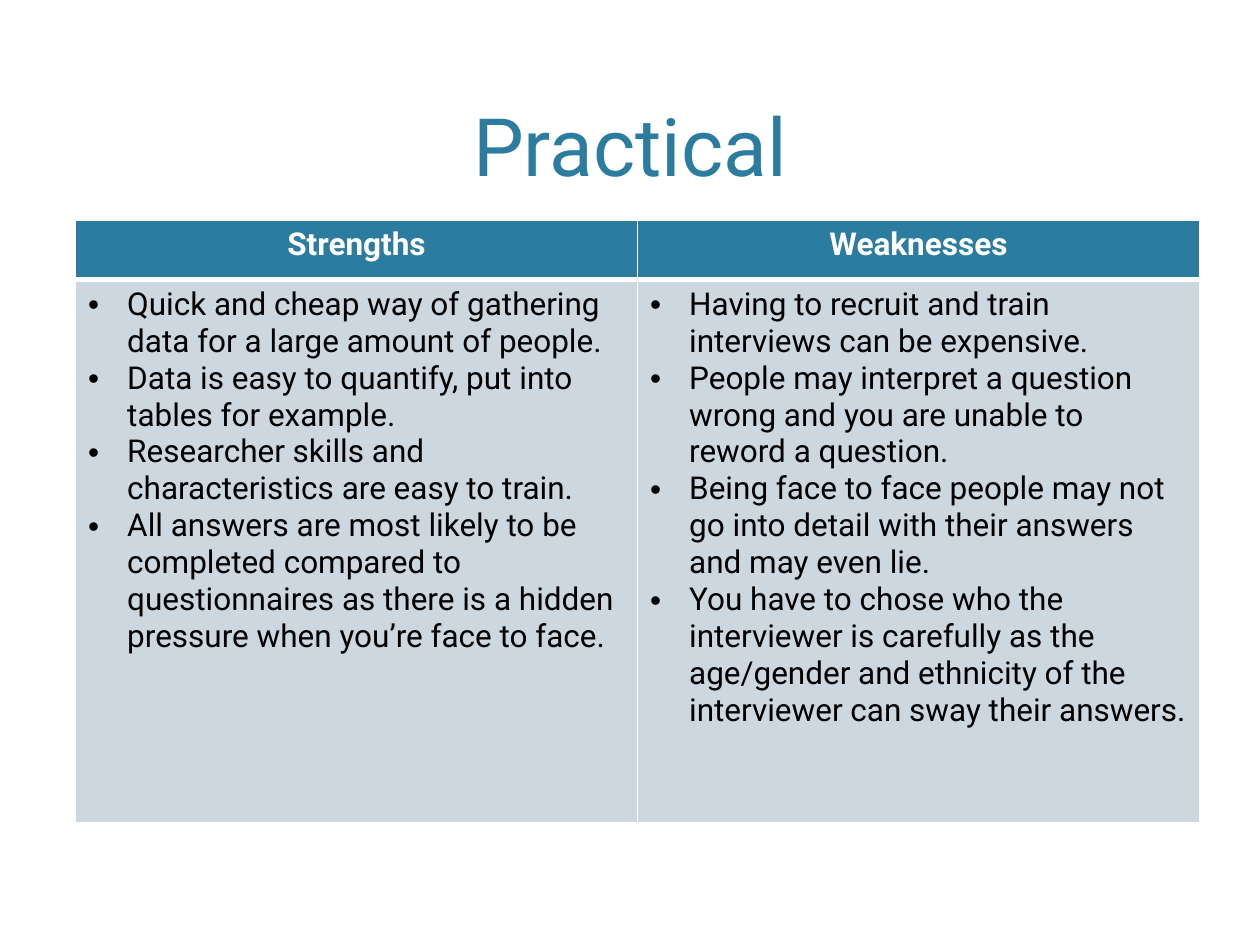
"""Build the slide comparing practical strengths and weaknesses."""
from dataclasses import dataclass

import lxml.etree
import pptx
import pptx.dml.color
import pptx.enum.text
import pptx.oxml.ns
import pptx.util

TEAL = pptx.dml.color.RGBColor(0x2C, 0x7C, 0x9F)
MIST = pptx.dml.color.RGBColor(0xCD, 0xD7, 0xDF)
WHITE = pptx.dml.color.RGBColor(0xFF, 0xFF, 0xFF)
BLACK = pptx.dml.color.RGBColor(0x00, 0x00, 0x00)
CENTER = pptx.enum.text.PP_ALIGN.CENTER

WIDTH, HEIGHT = pptx.util.Inches(10), pptx.util.Inches(7.5)
LEFT = int(WIDTH * 0.06)
COLUMN_WIDTH = pptx.util.Inches(4.46)
ROW_HEIGHTS = [pptx.util.Inches(0.47), pptx.util.Inches(4.31)]
INDENT = pptx.util.Inches(0.31)
THIN, THICK = pptx.util.Pt(1), pptx.util.Pt(3)

TITLE_FORMAT = {"name": "Roboto", "size": pptx.util.Pt(46), "bold": False}
HEAD_FORMAT = {"name": "Roboto", "size": pptx.util.Pt(18), "bold": True}
BODY_FORMAT = {**HEAD_FORMAT, "bold": False}


@dataclass
class Column:
    """One side of the comparison."""

    heading: str
    points: list[str]


COLUMNS = [
    Column("Strengths", [
        "Quick and cheap way of gathering data for a large amount of people.",
        "Data is easy to quantify, put into tables for example.",
        "Researcher skills and characteristics are easy to train.",
        "All answers are most likely to be completed compared to questionnaires "
        "as there is a hidden pressure when you’re face to face.",
    ]),
    Column("Weaknesses", [
        "Having to recruit and train interviews can be expensive.",
        "People may interpret a question wrong and you are unable to reword a question.",
        "Being face to face people may not go into detail with their answers "
        "and may even lie.",
        "You have to chose who the interviewer is carefully as the age/gender and "
        "ethnicity of the interviewer can sway their answers.",
    ]),
]


def write(para, text: str, values: dict, color: pptx.dml.color.RGBColor) -> None:
    """Add a formatted span of text to a paragraph."""
    span = para.add_run()
    span.text = text
    for name, value in values.items():
        setattr(span.font, name, value)
    span.font.color.rgb = color


def add_element(parent, tag: str, **attributes: str):
    """Append a DrawingML element to its parent."""
    return lxml.etree.SubElement(parent, pptx.oxml.ns.qn(tag), attributes)


def add_bullet(para) -> None:
    """Give a paragraph a round bullet with a hanging indent."""
    properties = para._p.get_or_add_pPr()
    properties.set("marL", str(INDENT))
    properties.set("indent", str(-INDENT))
    add_element(properties, "a:buFont", typeface="Arial")
    add_element(properties, "a:buChar", char="•")


def style_cell(cell, fill: pptx.dml.color.RGBColor, top: int, bottom: int) -> None:
    """Give a cell white borders and a solid fill."""
    properties = cell._tc.get_or_add_tcPr()
    for side, width in {"L": THIN, "R": THIN, "T": top, "B": bottom}.items():
        line = add_element(properties, f"a:ln{side}", w=str(width))
        add_element(add_element(line, "a:solidFill"), "a:srgbClr", val=str(WHITE))
    cell.fill.solid()
    cell.fill.fore_color.rgb = fill


def add_title(page, text: str) -> None:
    """Place the centred title above the table."""
    box = page.shapes.add_textbox(
        LEFT, pptx.util.Inches(0.12), WIDTH - 2 * LEFT, pptx.util.Inches(1.46))
    frame = box.text_frame
    frame.word_wrap = True
    frame.vertical_anchor = pptx.enum.text.MSO_ANCHOR.BOTTOM
    frame.paragraphs[0].alignment = CENTER
    write(frame.paragraphs[0], text, TITLE_FORMAT, TEAL)


def add_comparison(page, columns: list[Column]) -> None:
    """Draw the table with a heading and bulleted points per column."""
    table = page.shapes.add_table(
        len(ROW_HEIGHTS), len(columns), LEFT, pptx.util.Inches(1.75),
        COLUMN_WIDTH * len(columns), sum(ROW_HEIGHTS)).table
    for row, height in zip(table.rows, ROW_HEIGHTS):
        row.height = height
    for index, column in enumerate(columns):
        table.columns[index].width = COLUMN_WIDTH
        head, body = table.cell(0, index), table.cell(1, index)
        style_cell(head, TEAL, THIN, THICK)
        style_cell(body, MIST, THICK, THIN)
        para = head.text_frame.paragraphs[0]
        para.alignment = CENTER
        write(para, column.heading, HEAD_FORMAT, WHITE)
        frame = body.text_frame
        for number, point in enumerate(column.points):
            para = frame.add_paragraph() if number else frame.paragraphs[0]
            add_bullet(para)
            write(para, point, BODY_FORMAT, BLACK)


def main() -> None:
    """Build and save the deck."""
    deck = pptx.Presentation()
    deck.slide_width, deck.slide_height = WIDTH, HEIGHT
    page = deck.slides.add_slide(deck.slide_layouts[6])
    add_title(page, "Practical")
    add_comparison(page, COLUMNS)
    deck.save("out.pptx")


if __name__ == "__main__":
    main()
